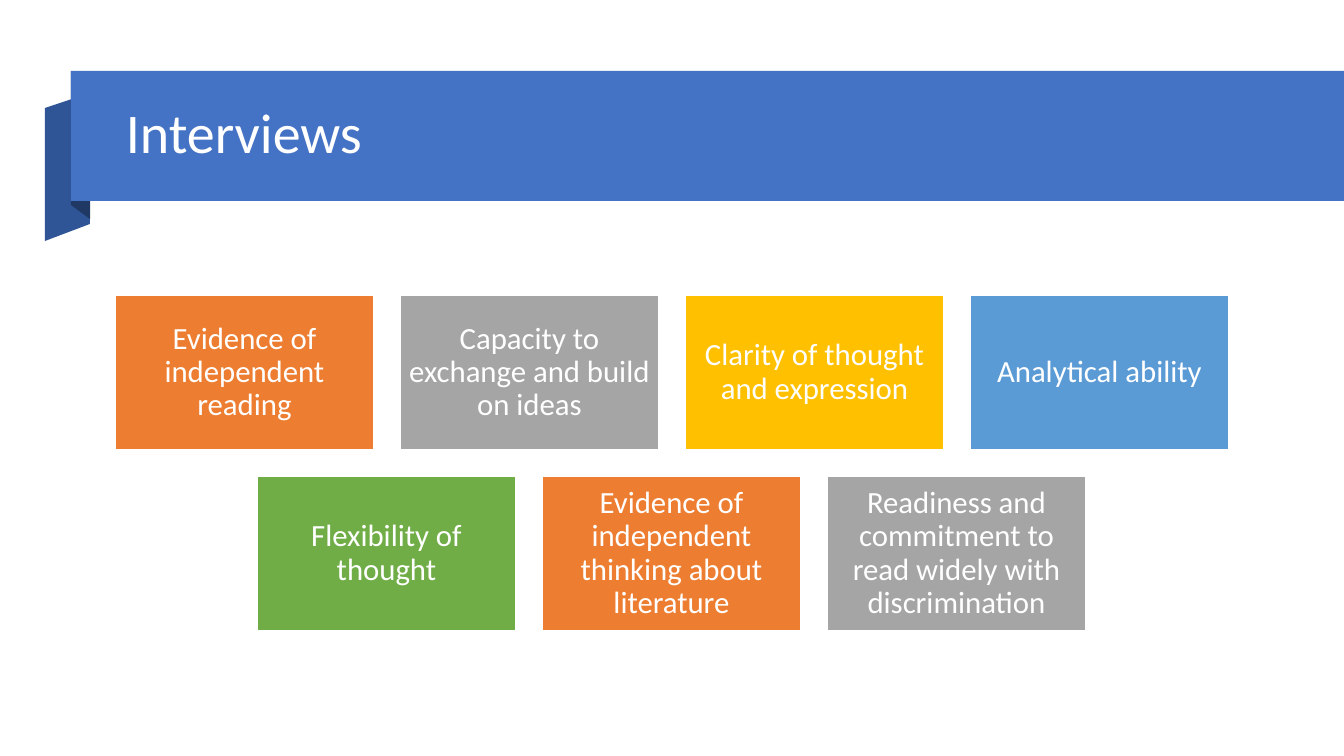
from pptx import Presentation
from pptx.dml.color import RGBColor
from pptx.enum.shapes import MSO_SHAPE
from pptx.enum.text import MSO_ANCHOR, PP_ALIGN
from pptx.util import Pt

EMU_PER_PX = 914400 / 100.8
SLIDE_WIDTH, SLIDE_HEIGHT = 1344, 756

WHITE = RGBColor(0xFF, 0xFF, 0xFF)
BLUE = RGBColor(0x44, 0x72, 0xC4)
DARK_BLUE = RGBColor(0x2F, 0x55, 0x97)
NAVY = RGBColor(0x20, 0x38, 0x64)
ORANGE = RGBColor(0xED, 0x7D, 0x31)
GRAY = RGBColor(0xA5, 0xA5, 0xA5)
GOLD = RGBColor(0xFF, 0xC0, 0x00)
LIGHT_BLUE = RGBColor(0x5B, 0x9B, 0xD5)
GREEN = RGBColor(0x70, 0xAD, 0x47)

FONT = "Calibri"
TITLE = "Interviews"
TITLE_BOX = (116, 87, 1136, 97)
BANNER_BOX = (71, 71, 1273, 130)
RIBBON_FOLDS = [
    (DARK_BLUE, [(90, 224), (45, 241), (45, 108), (90, 93)]),
    (NAVY, [(90, 219), (71, 205), (71, 71), (90, 86)]),
]
CARD_ROWS = [
    [
        ("Evidence of independent reading", ORANGE),
        ("Capacity to exchange and build on ideas", GRAY),
        ("Clarity of thought and expression", GOLD),
        ("Analytical ability", LIGHT_BLUE),
    ],
    [
        ("Flexibility of thought", GREEN),
        ("Evidence of independent thinking about literature", ORANGE),
        ("Readiness and commitment to read widely with discrimination", GRAY),
    ],
]
CARDS_TOP = 295
CARD_WIDTH, CARD_HEIGHT, CARD_GAP = 259, 155, 26
CARD_INSET = 9


def px(length):
    return round(length * EMU_PER_PX)


def paint(shape, color):
    shape.shadow.inherit = False
    shape.fill.solid()
    shape.fill.fore_color.rgb = color
    shape.line.fill.background()


def add_rectangle(slide, box, color):
    shape = slide.shapes.add_shape(MSO_SHAPE.RECTANGLE, *map(px, box))
    paint(shape, color)
    return shape


def write(shape, text, size, alignment):
    frame = shape.text_frame
    frame.word_wrap = True
    frame.vertical_anchor = MSO_ANCHOR.MIDDLE
    paragraph = frame.paragraphs[0]
    paragraph.alignment = alignment
    paragraph.line_spacing = 0.9
    run = paragraph.add_run()
    run.text = text
    run.font.name = FONT
    run.font.size = Pt(size)
    run.font.color.rgb = WHITE


def add_banner(slide):
    for color, points in RIBBON_FOLDS:
        builder = slide.shapes.build_freeform(*points[0], scale=EMU_PER_PX)
        builder.add_line_segments(points[1:], close=True)
        paint(builder.convert_to_shape(), color)
    add_rectangle(slide, BANNER_BOX, BLUE)
    title = slide.shapes.add_textbox(*map(px, TITLE_BOX))
    write(title, TITLE, 40, PP_ALIGN.LEFT)


def add_card(slide, left, top, text, color):
    card = add_rectangle(slide, (left, top, CARD_WIDTH, CARD_HEIGHT), color)
    card.line.color.rgb = WHITE
    card.line.width = Pt(1)
    frame = card.text_frame
    frame.margin_left = frame.margin_right = px(CARD_INSET)
    frame.margin_top = frame.margin_bottom = px(CARD_INSET)
    write(card, text, 22, PP_ALIGN.CENTER)


def add_cards(slide):
    for row, cards in enumerate(CARD_ROWS):
        row_width = len(cards) * (CARD_WIDTH + CARD_GAP) - CARD_GAP
        row_left = (SLIDE_WIDTH - row_width) // 2
        top = CARDS_TOP + row * (CARD_HEIGHT + CARD_GAP)
        for column, (text, color) in enumerate(cards):
            left = row_left + column * (CARD_WIDTH + CARD_GAP)
            add_card(slide, left, top, text, color)


def main():
    presentation = Presentation()
    presentation.slide_width = px(SLIDE_WIDTH)
    presentation.slide_height = px(SLIDE_HEIGHT)
    slide = presentation.slides.add_slide(presentation.slide_layouts[6])
    add_banner(slide)
    add_cards(slide)
    presentation.save("out.pptx")


if __name__ == "__main__":
    main()
